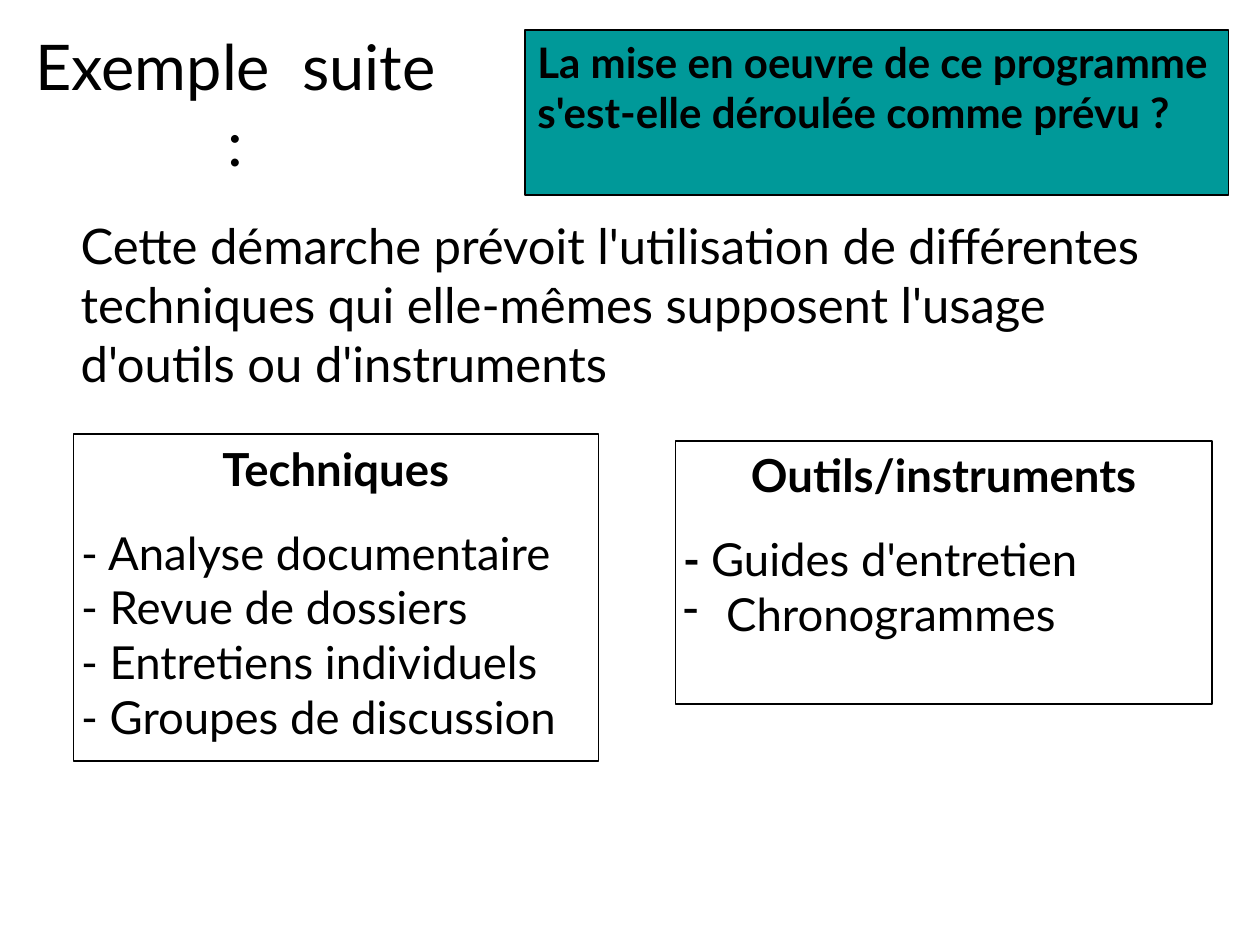
from pptx import Presentation
from pptx.dml.color import RGBColor
from pptx.enum.shapes import MSO_SHAPE
from pptx.enum.text import MSO_ANCHOR, PP_ALIGN
from pptx.oxml.ns import qn
from pptx.util import Pt
from lxml import etree

RECT = MSO_SHAPE.RECTANGLE
TOP, MIDDLE = MSO_ANCHOR.TOP, MSO_ANCHOR.MIDDLE
LEFT, CENTER = PP_ALIGN.LEFT, PP_ALIGN.CENTER
BLACK = RGBColor(0x00, 0x00, 0x00)
TEAL = RGBColor(0x00, 0x99, 0x99)
FONT = "Lato"
LIST_SIZE = 26


def format_runs(p, size, bold=False, align=LEFT):
    p.alignment = align
    for r in p.runs:
        r.font.name = FONT
        r.font.size = Pt(size)
        r.font.bold = bold
        r.font.color.rgb = BLACK


def set_frame(tf, anchor=TOP, side=7.2):
    tf.word_wrap = True
    tf.vertical_anchor = anchor
    tf.margin_left = tf.margin_right = Pt(side)
    tf.margin_top = tf.margin_bottom = Pt(3.6)


def add_title(s, text, box):
    title = s.shapes.title
    title.left, title.top, title.width, title.height = map(Pt, box)
    title.text_frame.text = text
    set_frame(title.text_frame, MIDDLE)
    format_runs(title.text_frame.paragraphs[0], 36, align=CENTER)


def add_intro(s, text, box):
    tf = s.shapes.add_textbox(*map(Pt, box)).text_frame
    tf.text = text
    set_frame(tf)
    format_runs(tf.paragraphs[0], 28)


def add_box(s, box, side=7.2, fill=None):
    """Add a black-outlined rectangle and return its text frame."""
    sp = s.shapes.add_shape(RECT, *map(Pt, box))
    sp.shadow.inherit = False
    if fill is None:
        sp.fill.background()
    else:
        sp.fill.solid()
        sp.fill.fore_color.rgb = fill
    sp.line.color.rgb = BLACK
    sp.line.width = Pt(1)
    set_frame(sp.text_frame, side=side)
    return sp.text_frame


def add_question(s, text, box):
    tf = add_box(s, box, fill=TEAL)
    tf.text = text
    format_runs(tf.paragraphs[0], 24, bold=True)


def add_list_box(s, heading, items, box):
    """Add a box with a bold heading above its items; return the item paragraphs."""
    tf = add_box(s, box, side=4.3)
    tf.text = heading
    format_runs(tf.paragraphs[0], LIST_SIZE, bold=True, align=CENTER)
    tf.paragraphs[0].space_after = Pt(17)
    for item in items:
        p = tf.add_paragraph()
        p.text = item
        format_runs(p, LIST_SIZE)
    return tf.paragraphs[1:]


def add_dash_bullet(p, indent=18):
    pPr = p._p.get_or_add_pPr()
    pPr.set("marL", str(Pt(indent)))
    pPr.set("indent", str(-Pt(indent)))
    etree.SubElement(pPr, qn("a:buChar")).set("char", "-")


def main():
    prs = Presentation()
    prs.slide_width, prs.slide_height = Pt(720), Pt(540)
    s = prs.slides.add_slide(prs.slide_layouts[5])

    add_intro(s, "Cette démarche prévoit l'utilisation de différentes techniques "
                 "qui elle-mêmes supposent l'usage d'outils ou d'instruments",
              (39, 119.5, 639.5, 109.5))
    add_list_box(s, "Techniques",
                 ["- Analyse documentaire", "- Revue de dossiers",
                  "- Entretiens individuels", "- Groupes de discussion"],
                 (42, 248.2, 300, 186.5))
    guides, chronograms = add_list_box(
        s, "Outils/instruments", ["- ", " Chronogrammes"],
        (386, 252, 306.8, 150.3))
    guides.add_run().text = "Guides d'entretien"
    format_runs(guides, LIST_SIZE)
    guides.runs[0].font.bold = True
    add_dash_bullet(chronograms)
    add_question(s, "La mise en oeuvre de ce programme s'est-elle déroulée "
                    "comme prévu ?", (300, 17.2, 402, 94.3))
    add_title(s, "Exemple  suite :", (8.6, 12.2, 252, 93.6))

    prs.save("out.pptx")


if __name__ == "__main__":
    main()
